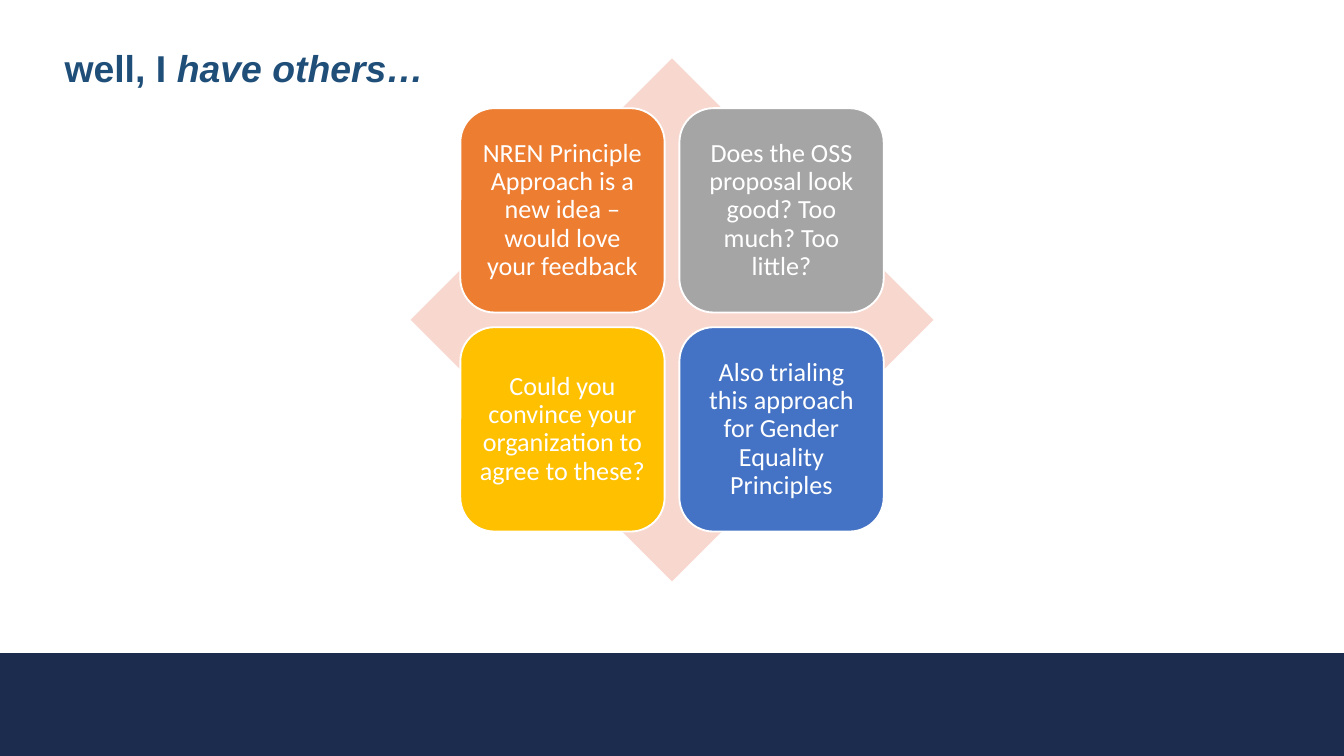
from dataclasses import dataclass

from pptx import Presentation
from pptx.dml.color import RGBColor
from pptx.enum.shapes import MSO_SHAPE
from pptx.enum.text import MSO_ANCHOR, PP_ALIGN
from pptx.util import Inches, Pt

BAR, DIAMOND, ROUND = (MSO_SHAPE.RECTANGLE, MSO_SHAPE.DIAMOND,
                       MSO_SHAPE.ROUNDED_RECTANGLE)
MIDDLE = MSO_ANCHOR.MIDDLE
LEFT, CENTER = PP_ALIGN.LEFT, PP_ALIGN.CENTER

WIDTH = 10
HEIGHT = WIDTH * 9 / 16
BAR_TOP = 4.86
MID_X, MID_Y = 5, 2.38      # centre of the matrix
SPAN = 3.89                 # diamond width and height
TILE, PITCH = 1.52, 1.63    # tile side, step from tile to tile


@dataclass(frozen=True)
class Theme:
    navy: str = "1C2C4F"
    title: str = "1F4E79"
    blush: str = "F8D7CE"
    white: str = "FFFFFF"
    tiles: tuple = ("ED7D31", "A5A5A5", "FFC000", "4472C4")
    head_font: str = "Arial"
    tile_font: str = "Calibri"
    head_size: int = 20
    tile_size: int = 14


THEME = Theme()

QUESTIONS = (
    "NREN Principle Approach is a new idea – would love your feedback",
    "Does the OSS proposal look good? Too much? Too little?",
    "Could you convince your organization to agree to these?",
    "Also trialing this approach for Gender Equality Principles",
)


def rgb(code):
    return RGBColor.from_string(code)


def style(font, name, size, color):
    font.name, font.size = name, Pt(size)
    font.color.rgb = rgb(color)


def add_block(slide, kind, box, fill):
    """Add a flat filled shape without an outline; box is in inches."""
    shape = slide.shapes.add_shape(kind, *map(Inches, box))
    shape.shadow.inherit = False
    shape.fill.solid()
    shape.fill.fore_color.rgb = rgb(fill)
    shape.line.fill.background()
    return shape


def add_title(slide):
    title = slide.shapes.title
    title.left, title.top = Inches(0.38), Inches(0.14)
    title.width, title.height = Inches(9.23), Inches(0.76)
    frame = title.text_frame
    frame.vertical_anchor = MIDDLE
    para = frame.paragraphs[0]
    para.alignment, para.line_spacing = LEFT, 0.9
    para.add_run().text = "well, I "
    stress = para.add_run()
    stress.text = "have others…"
    stress.font.italic = True
    style(para.font, THEME.head_font, THEME.head_size, THEME.title)
    para.font.bold = True


def add_tile(slide, row, col, text, fill):
    left = MID_X + (col - 0.5) * PITCH - TILE / 2
    top = MID_Y + (row - 0.5) * PITCH - TILE / 2
    tile = add_block(slide, ROUND, (left, top, TILE, TILE), fill)
    tile.line.color.rgb = rgb(THEME.white)
    tile.line.width = Pt(1)
    frame = tile.text_frame
    frame.word_wrap = True
    frame.vertical_anchor = MIDDLE
    frame.margin_left = frame.margin_right = Inches(0.06)
    frame.margin_top = frame.margin_bottom = Inches(0.06)
    frame.text = text
    para = frame.paragraphs[0]
    para.alignment, para.line_spacing = CENTER, 0.9
    style(para.font, THEME.tile_font, THEME.tile_size, THEME.white)


def add_matrix(slide):
    add_block(slide, DIAMOND,
              (MID_X - SPAN / 2, MID_Y - SPAN / 2, SPAN, SPAN), THEME.blush)
    for i, (text, fill) in enumerate(zip(QUESTIONS, THEME.tiles)):
        add_tile(slide, *divmod(i, 2), text, fill)


def main():
    deck = Presentation()
    deck.slide_width, deck.slide_height = Inches(WIDTH), Inches(HEIGHT)
    slide = deck.slides.add_slide(deck.slide_layouts[5])
    add_block(slide, BAR, (0, BAR_TOP, WIDTH, HEIGHT - BAR_TOP), THEME.navy)
    add_title(slide)
    add_matrix(slide)
    deck.save("out.pptx")


if __name__ == "__main__":
    main()
